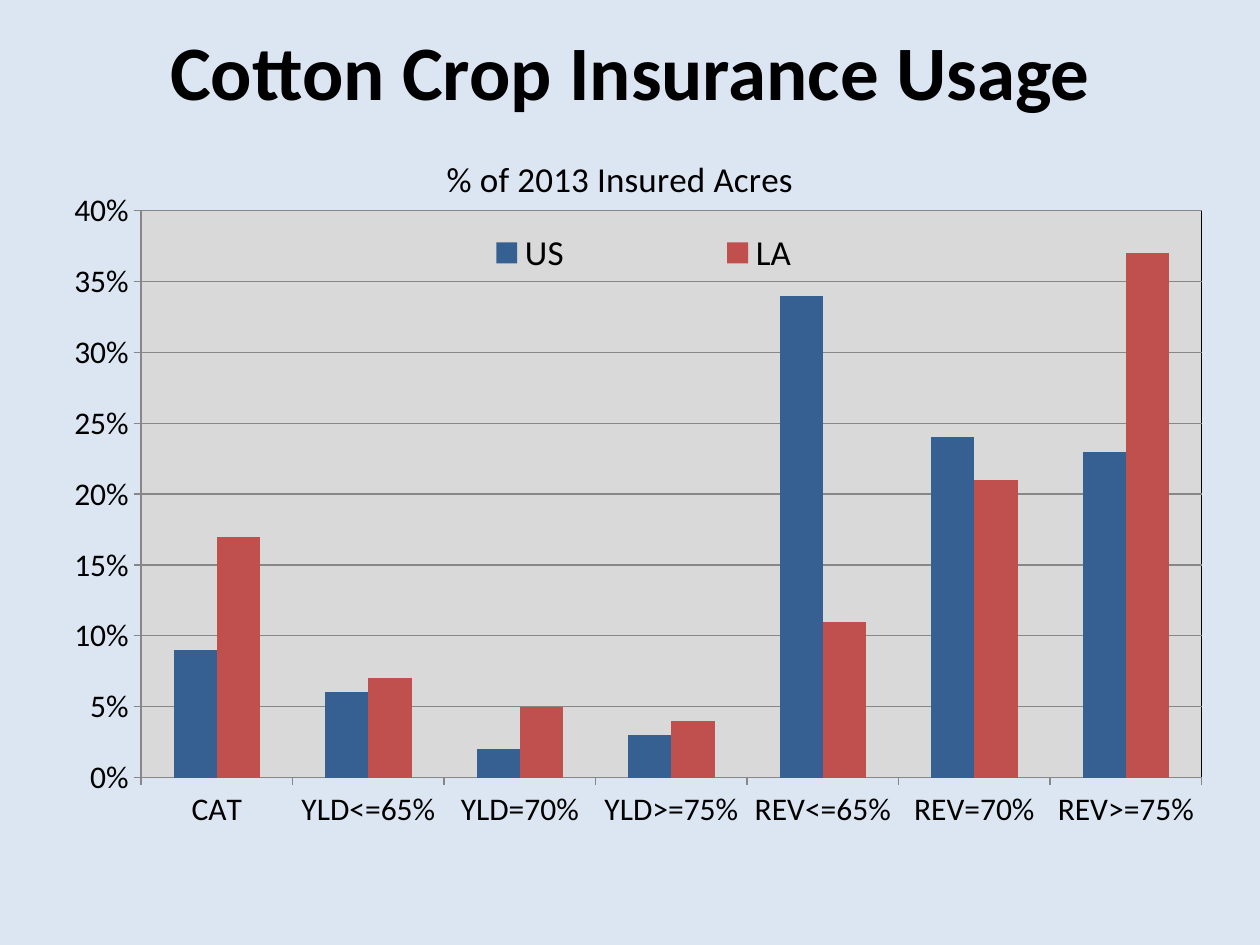
from lxml.etree import SubElement
from pptx import Presentation
from pptx.chart.data import CategoryChartData
from pptx.dml.color import RGBColor
from pptx.enum.chart import XL_CHART_TYPE, XL_LEGEND_POSITION, XL_TICK_MARK
from pptx.enum.text import MSO_ANCHOR, PP_ALIGN
from pptx.oxml import parse_xml
from pptx.oxml.ns import nsdecls, qn
from pptx.util import Inches, Pt

FONT = "Calibri"
COLORS = {
    "background": "DCE6F2",
    "text": "000000",
    "plot": "D9D9D9",
    "border": "000000",
    "grid": "878787",
    "US": "376092",
    "LA": "C0504D",
}
TITLE = "Cotton Crop Insurance Usage"
CHART_TITLE = "% of 2013 Insured Acres"
CATEGORIES = ["CAT", "YLD<=65%", "YLD=70%", "YLD>=75%",
              "REV<=65%", "REV=70%", "REV>=75%"]
SERIES = {
    "US": [0.09, 0.06, 0.02, 0.03, 0.34, 0.24, 0.23],
    "LA": [0.17, 0.07, 0.05, 0.04, 0.11, 0.21, 0.37],
}


def color(name):
    return RGBColor.from_string(COLORS[name])


def style_font(font, size, bold=False):
    font.name = FONT
    font.size = Pt(size)
    font.bold = bold
    font.color.rgb = color("text")


def write_text(text_frame, text, size, bold=False):
    paragraph = text_frame.paragraphs[0]
    paragraph.alignment = PP_ALIGN.CENTER
    run = paragraph.add_run()
    run.text = text
    style_font(run.font, size, bold)


def place(parent, index, target=None, **fractions):
    for layout in parent.findall(qn("c:layout")):
        parent.remove(layout)
    layout = parse_xml(f"<c:layout {nsdecls('c')}/>")
    manual = SubElement(layout, qn("c:manualLayout"))
    settings = {"layoutTarget": target} if target else {}
    settings.update(xMode="edge", yMode="edge", **fractions)
    for tag, value in settings.items():
        SubElement(manual, qn(f"c:{tag}")).set("val", str(value))
    parent.insert(index, layout)


def style_axis(axis):
    axis.major_tick_mark = XL_TICK_MARK.OUTSIDE
    axis.minor_tick_mark = XL_TICK_MARK.NONE
    axis.format.line.color.rgb = color("grid")
    axis.format.line.width = Pt(0.75)
    style_font(axis.tick_labels.font, 18)


def add_title(slide):
    box = slide.shapes.add_textbox(Inches(0.17), Inches(0.08), Inches(9.67), Inches(0.95))
    box.text_frame.word_wrap = True
    box.text_frame.vertical_anchor = MSO_ANCHOR.MIDDLE
    write_text(box.text_frame, TITLE, 44, bold=True)


def add_usage_chart(slide):
    data = CategoryChartData(number_format="0%")
    data.categories = CATEGORIES
    for name, values in SERIES.items():
        data.add_series(name, values)
    chart = slide.shapes.add_chart(
        XL_CHART_TYPE.COLUMN_CLUSTERED,
        Inches(0.17), Inches(1.03), Inches(9.5), Inches(6), data).chart
    style_font(chart.font, 18)

    chart.has_title = True
    write_text(chart.chart_title.text_frame, CHART_TITLE, 20)
    chart.chart_title.include_in_layout = True
    place(chart.chart_title._element, 1, x=0.35, y=0.024)

    chart.has_legend = True
    chart.legend.position = XL_LEGEND_POSITION.RIGHT
    chart.legend.include_in_layout = True
    style_font(chart.legend.font, 20)
    place(chart.legend._element, 1, x=0.27, y=0.123, w=0.5, h=0.08)

    plot = chart.plots[0]
    plot.gap_width = 150
    plot.overlap = 0
    plot.vary_by_categories = False
    for series in plot.series:
        series.format.fill.solid()
        series.format.fill.fore_color.rgb = color(series.name)
        series.invert_if_negative = False

    value_axis = chart.value_axis
    for axis in (chart.category_axis, value_axis):
        style_axis(axis)
    value_axis.minimum_scale = 0
    value_axis.maximum_scale = 0.4
    value_axis.major_unit = 0.05
    value_axis.tick_labels.number_format = "0%"
    value_axis.tick_labels.number_format_is_linked = False
    value_axis.has_major_gridlines = True
    value_axis.major_gridlines.format.line.color.rgb = color("grid")
    value_axis.major_gridlines.format.line.width = Pt(0.75)

    plot_area = chart._chartSpace.chart.plotArea
    place(plot_area, 0, target="inner", x=0.1, y=0.107, w=0.886, h=0.75)
    plot_area.append(parse_xml(
        f'<c:spPr {nsdecls("c", "a")}>'
        f'<a:solidFill><a:srgbClr val="{COLORS["plot"]}"/></a:solidFill>'
        f'<a:ln w="{Pt(0.75)}"><a:solidFill><a:srgbClr val="{COLORS["border"]}"/></a:solidFill></a:ln>'
        '</c:spPr>'))


def main():
    presentation = Presentation()
    presentation.slide_width = Inches(10)
    presentation.slide_height = Inches(7.5)
    slide = presentation.slides.add_slide(presentation.slide_layouts[6])
    slide.background.fill.solid()
    slide.background.fill.fore_color.rgb = color("background")
    add_title(slide)
    add_usage_chart(slide)
    presentation.save("out.pptx")


if __name__ == "__main__":
    main()
